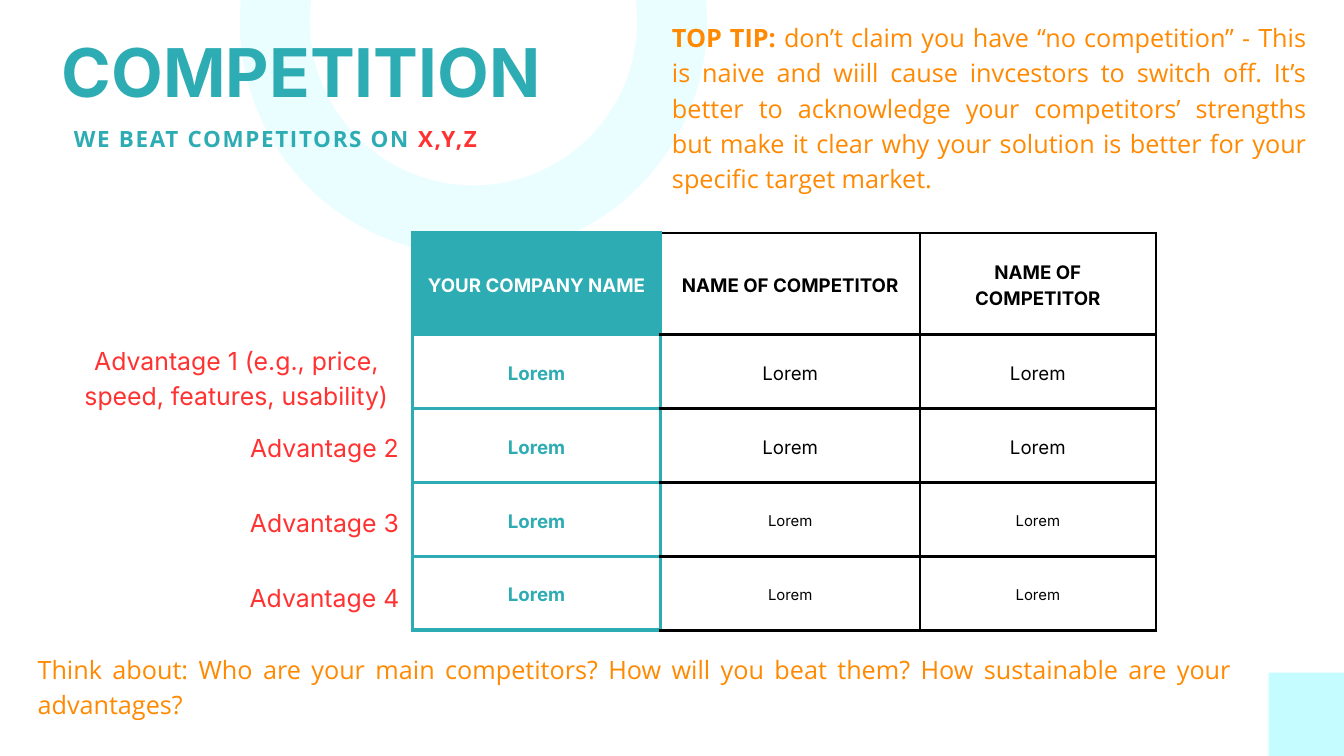
"""Build the competition comparison slide."""
from lxml.etree import SubElement
from pptx import Presentation
from pptx.dml.color import RGBColor
from pptx.enum.shapes import MSO_SHAPE
from pptx.enum.text import MSO_ANCHOR, PP_ALIGN
from pptx.oxml import parse_xml
from pptx.oxml.ns import nsdecls
from pptx.util import Pt

PX = 9144
COLORS = {
    "teal": "2EACB3",
    "ring": "EBFEFF",
    "corner": "C5FCFF",
    "orange": "FF8900",
    "red": "FF3131",
    "black": "000000",
    "white": "FFFFFF",
}


def format_run(run, font, size, color, bold=False, spacing=0):
    run.font.name = font
    run.font.size = Pt(size)
    run.font.bold = bold
    run.font.color.rgb = RGBColor.from_string(COLORS[color])
    if spacing:
        run._r.get_or_add_rPr().set("spc", str(spacing))


def add_text(box, runs, font, size, line_spacing, align=PP_ALIGN.LEFT, spacing=0):
    shape = slide.shapes.add_textbox(*[length * PX for length in box])
    frame = shape.text_frame
    frame.word_wrap = True
    frame.margin_left = frame.margin_right = frame.margin_top = frame.margin_bottom = 0
    paragraph = frame.paragraphs[0]
    paragraph.alignment = align
    paragraph.line_spacing = Pt(line_spacing)
    for text, color, bold in runs:
        run = paragraph.add_run()
        run.text = text
        format_run(run, font, size, color, bold, spacing)


presentation = Presentation()
presentation.slide_width = 2000 * PX
presentation.slide_height = 1125 * PX
slide = presentation.slides.add_slide(presentation.slide_layouts[6])

corner = slide.shapes.add_shape(
    MSO_SHAPE.RECTANGLE, 1888 * PX, 1001 * PX, 112 * PX, 124 * PX
)
corner.shadow.inherit = False
corner.fill.solid()
corner.fill.fore_color.rgb = RGBColor.from_string(COLORS["corner"])
corner.line.fill.background()

ring = slide.shapes.add_shape(
    MSO_SHAPE.OVAL, 409 * PX, -263 * PX, 591 * PX, 591 * PX
)
ring.shadow.inherit = False
ring.fill.background()
ring.line.color.rgb = RGBColor.from_string(COLORS["ring"])
ring.line.width = Pt(75)

headers = ["YOUR COMPANY NAME", "NAME OF COMPETITOR", "NAME OF COMPETITOR"]
rows = [headers] + [["Lorem"] * 3] * 4
column_widths = [369, 386, 351]
row_heights = [151, 110, 110, 110, 110]
table = slide.shapes.add_table(
    5, 3, 614 * PX, 347 * PX, sum(column_widths) * PX, sum(row_heights) * PX
).table
table.first_row = table.horz_banding = False
for column, width in zip(table.columns, column_widths):
    column.width = width * PX
for row, height in zip(table.rows, row_heights):
    row.height = height * PX

for row_index, texts in enumerate(rows):
    for column_index, text in enumerate(texts):
        cell = table.cell(row_index, column_index)
        own_company = column_index == 0
        header = row_index == 0
        size = 16 if row_index > 2 and not own_company else 20
        cell.vertical_anchor = MSO_ANCHOR.MIDDLE
        cell.margin_left = cell.margin_right = 21 * PX
        cell.margin_top = cell.margin_bottom = 21 * PX
        if own_company and header:
            cell.fill.solid()
            cell.fill.fore_color.rgb = RGBColor.from_string(COLORS["teal"])
            color = "white"
        else:
            cell.fill.background()
            color = "teal" if own_company else "black"
        cell.text_frame.text = text
        paragraph = cell.text_frame.paragraphs[0]
        paragraph.alignment = PP_ALIGN.CENTER
        paragraph.line_spacing = Pt(size * 1.4)
        format_run(paragraph.runs[0], "Inter", size, color, header or own_company)

        properties = cell._tc.get_or_add_tcPr()
        for position, side in enumerate("LRTB"):
            teal_side = own_company or (column_index == 1 and side == "L")
            width = Pt(4.5 if teal_side else 3)
            border = parse_xml(f'<a:ln{side} {nsdecls("a")} w="{width}"/>')
            fill = SubElement(border, border.tag.replace(f"ln{side}", "solidFill"))
            border_color = SubElement(fill, fill.tag.replace("solidFill", "srgbClr"))
            border_color.set("val", COLORS["teal" if teal_side else "black"])
            properties.insert(position, border)

add_text(
    (56, 966, 1776, 103),
    [("Think about: Who are your main competitors? How will you beat them? "
      "How sustainable are your advantages?", "orange", False)],
    "Open Sans", 27, 37.8, PP_ALIGN.JUSTIFY,
)

advantages = [("Advantage 1 (e.g., price, speed, features, usability)", (92, 507, 520, 101))]
advantages += [
    (f"Advantage {number}", (367, 636 + 112 * (number - 2), 232, 50))
    for number in range(2, 5)
]
for text, box in advantages:
    add_text(box, [(text, "red", False)], "Inter", 26.6, 37.3, PP_ALIGN.CENTER)

add_text((92, 60, 1040, 109), [("COMPETITION", "teal", True)], "Inter", 72, 75.6)
add_text(
    (110, 180, 890, 43),
    [("WE BEAT COMPETITORS ON", "teal", True), (" X,Y,Z", "red", True)],
    "Open Sans", 24, 33.6, spacing=180,
)
add_text(
    (1000, 26, 944, 311),
    [("TOP TIP:", "orange", True),
     (" don’t claim you have “no competition” - This is naive and wiill cause "
      "invcestors to switch off. It’s better to acknowledge your competitors’ "
      "strengths but make it clear why your solution is better for your specific "
      "target market.", "orange", False)],
    "Open Sans", 27, 37.8, PP_ALIGN.JUSTIFY,
)

presentation.save("out.pptx")
